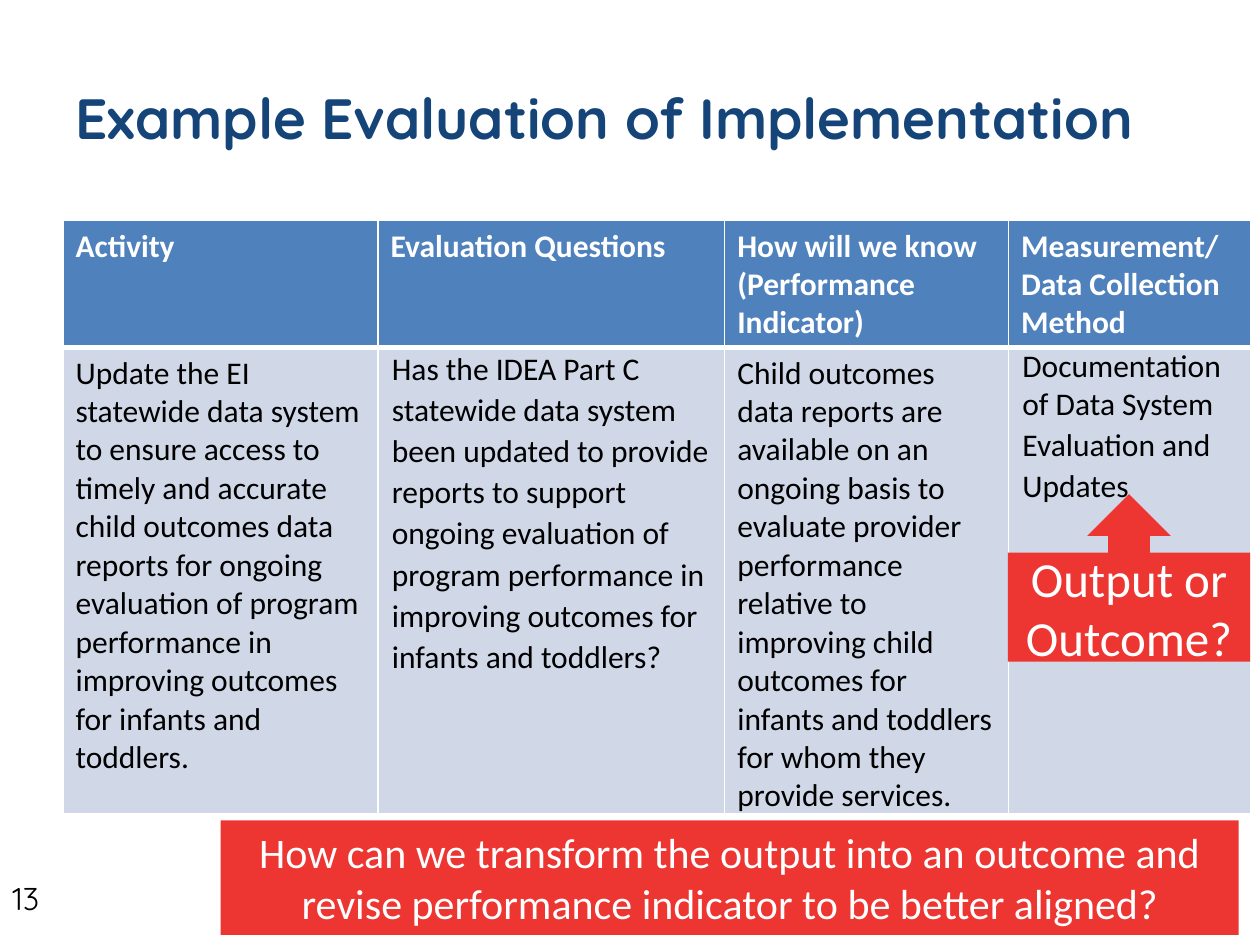
from lxml import etree
from pptx import Presentation
from pptx import util as u
from pptx.dml.color import RGBColor
from pptx.enum import shapes, text
from pptx.oxml import ns

HUES = {"navy": "154578", "blue": "4F81BD", "pale": "D0D8E8",
        "red": "ED3532", "white": "FFFFFF", "black": "000000"}
FORMS = {
    "title": {"name": "Quicksand", "size": u.Pt(32.4), "bold": True, "hue": "navy"},
    "page": {"name": "Quicksand", "size": u.Pt(18), "bold": False, "hue": "black"},
    "head": {"name": "Calibri", "size": u.Pt(18), "bold": True, "hue": "white"},
    "body": {"name": "Calibri", "size": u.Pt(18), "bold": False, "hue": "black"},
    "call": {"name": "Calibri", "size": u.Pt(28), "bold": False, "hue": "white"},
    "ask": {"name": "Calibri", "size": u.Pt(24), "bold": False, "hue": "white"},
}
TIGHT = {"margin_left": u.Cm(0.28), "margin_right": u.Cm(0.28),
         "margin_top": 0, "margin_bottom": 0}
LOOSE = {"line_spacing": 1.07, "space_after": u.Pt(8)}
CLOSE = {"line_spacing": 0.99, "space_after": u.Pt(0)}

HEADS = [["Activity"], ["Evaluation Questions"],
         ["How will we know", "(Performance Indicator)"],
         ["Measurement/", "Data Collection Method"]]
FACTS = [
    ["Update the EI statewide data system to ensure access to timely and accurate "
     "child outcomes data reports for ongoing evaluation of program performance in "
     "improving outcomes for infants and toddlers."],
    ["Has the IDEA Part C statewide data system been updated to provide reports to "
     "support ongoing evaluation of program performance in improving outcomes for "
     "infants and toddlers?"],
    ["Child outcomes data reports are available on an ongoing basis to evaluate "
     "provider performance relative to improving child outcomes for infants and "
     "toddlers for whom they provide services."],
    ["Documentation of Data System", "Evaluation and Updates"],
]


def apply(item, values):
    for key, value in values.items():
        setattr(item, key, value)


class Deck:
    """Hold the style and the current slide, and draw each kind of element."""

    def __init__(self, wide, high):
        self.file = Presentation()
        apply(self.file, {"slide_width": u.Cm(wide), "slide_height": u.Cm(high)})
        self.slide = self.file.slides.add_slide(self.file.slide_layouts[6])

    def paint(self, fill, hue):
        fill.solid()
        fill.fore_color.rgb = RGBColor.from_string(HUES[hue])

    def words(self, frame, lines, form, align=text.PP_ALIGN.LEFT):
        frame.word_wrap = True
        frame.text = "\n".join(lines)
        for para in frame.paragraphs:
            para.alignment = align
            for run in para.runs:
                font = {**FORMS[form]}
                hue = font.pop("hue")
                apply(run.font, font)
                run.font.color.rgb = RGBColor.from_string(HUES[hue])

    def label(self, box, line, form, anchor):
        frame = self.slide.shapes.add_textbox(*map(u.Cm, box)).text_frame
        self.words(frame, [line], form)
        frame.vertical_anchor = anchor

    def block(self, kind, box, line, form, frame):
        shape = self.slide.shapes.add_shape(kind, *map(u.Cm, box))
        shape.shadow.inherit = False
        self.paint(shape.fill, "red")
        shape.line.fill.background()
        self.words(shape.text_frame, [line], form, text.PP_ALIGN.CENTER)
        apply(shape.text_frame, frame)

    def edge(self, cell, sides):
        props = cell._tc.get_or_add_tcPr()
        for side, size in sides.items():
            line = etree.SubElement(props, ns.qn(f"a:ln{side}"), w=str(u.Pt(size)))
            fill = etree.SubElement(line, ns.qn("a:solidFill"))
            etree.SubElement(fill, ns.qn("a:srgbClr"), val=HUES["white"])

    def table(self, left, top, cols, rows, data):
        box = map(u.Cm, (left, top, sum(cols), sum(rows)))
        grid = self.slide.shapes.add_table(len(rows), len(cols), *box).table
        for col, wide in zip(grid.columns, cols):
            col.width = u.Cm(wide)
        for r, (high, line) in enumerate(zip(rows, data)):
            grid.rows[r].height = u.Cm(high)
            for c, lines in enumerate(line):
                cell = grid.cell(r, c)
                self.edge(cell, {"L": 1, "R": 1, "T": 3 if r else 1, "B": 1 if r else 3})
                self.paint(cell.fill, "pale" if r else "blue")
                self.words(cell.text_frame, lines, "body" if r else "head")
        return grid


def main():
    deck = Deck(25.4, 19.05)
    deck.label((0, 17.6, 1.27, 1.24), "13", "page", text.MSO_ANCHOR.TOP)
    deck.label((1.27, 0.76, 22.86, 3.18), "Example Evaluation of Implementation",
               "title", text.MSO_ANCHOR.MIDDLE)
    grid = deck.table(1.27, 4.45, [6.35, 6.99, 5.72, 4.88], [2.56, 8.76], [HEADS, FACTS])
    for c, gaps in {1: [LOOSE], 3: [CLOSE, LOOSE]}.items():
        cell = grid.cell(1, c)
        apply(cell, TIGHT)
        for para, gap in zip(cell.text_frame.paragraphs, gaps):
            apply(para, gap)
    deck.block(shapes.MSO_SHAPE.UP_ARROW_CALLOUT, (20.32, 9.96, 4.88, 3.38),
               "Output or Outcome?", "call", {"vertical_anchor": text.MSO_ANCHOR.MIDDLE})
    deck.block(shapes.MSO_SHAPE.RECTANGLE, (4.45, 16.54, 20.52, 2.31),
               "How can we transform the output into an outcome and revise performance "
               "indicator to be better aligned?", "ask",
               {"vertical_anchor": text.MSO_ANCHOR.TOP,
                "auto_size": text.MSO_AUTO_SIZE.SHAPE_TO_FIT_TEXT})
    deck.file.save("out.pptx")


if __name__ == "__main__":
    main()
